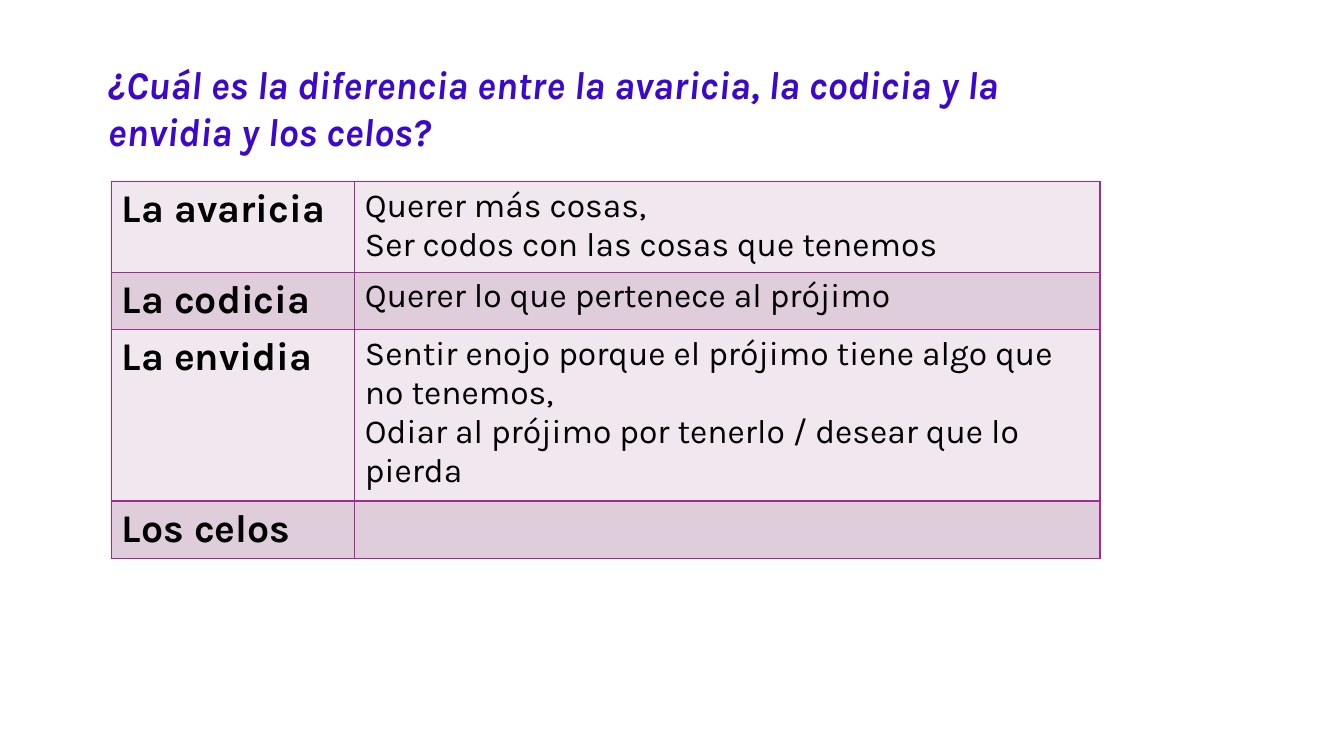
from lxml import etree
from pptx import Presentation
from pptx.dml.color import RGBColor
from pptx.enum import text
from pptx.oxml import ns
from pptx.util import Inches, Pt

FONT = "Karla"
COLORS = {
    "background": "FFFFFF",
    "title": "3C08CE",
    "body": "000000",
    "border": "A02B93",
    "light_row": "F0E8EE",
    "dark_row": "DFCDDC",
}
TITLE = "¿Cuál es la diferencia entre la avaricia, la codicia y la envidia y los celos?"
# Term, meaning, row height in inches
DEFINITIONS = [
    ("La avaricia", "Querer más cosas,\nSer codos con las cosas que tenemos", 0.89),
    ("La codicia", "Querer lo que pertenece al prójimo", 0.57),
    ("La envidia", "Sentir enojo porque el prójimo tiene algo que no tenemos,\n"
                   "Odiar al prójimo por tenerlo / desear que lo pierda", 1.7),
    ("Los celos", "", 0.57),
]
COLUMN_WIDTHS = (2.41, 7.39)


def color(name):
    return RGBColor.from_string(COLORS[name])


def write(frame, content, size, color_name, bold=False, italic=False):
    frame.text = content
    for para in frame.paragraphs:
        for span in para.runs:
            font = span.font
            font.name, font.size = FONT, Pt(size)
            font.bold, font.italic = bold, italic
            font.color.rgb = color(color_name)


def add_title(page):
    box = page.shapes.add_textbox(Inches(0.97), Inches(0.55), Inches(9.03), Inches(1.99))
    frame = box.text_frame
    frame.word_wrap = True
    frame.auto_size = text.MSO_AUTO_SIZE.SHAPE_TO_FIT_TEXT
    write(frame, TITLE, 28, "title", bold=True, italic=True)


def set_borders(cell):
    properties = cell._tc.get_or_add_tcPr()
    for index, side in enumerate(("lnL", "lnR", "lnT", "lnB")):
        line = etree.Element(ns.qn(f"a:{side}"), w=str(Pt(1)))
        fill = etree.SubElement(line, ns.qn("a:solidFill"))
        etree.SubElement(fill, ns.qn("a:srgbClr"), val=COLORS["border"])
        properties.insert(index, line)  # borders come before the fill


def add_definitions(page):
    height = sum(row_height for _, _, row_height in DEFINITIONS)
    table = page.shapes.add_table(
        len(DEFINITIONS), len(COLUMN_WIDTHS),
        Inches(1.11), Inches(1.8), Inches(sum(COLUMN_WIDTHS)), Inches(height)).table
    table.first_row = False
    for column, width in zip(table.columns, COLUMN_WIDTHS):
        column.width = Inches(width)
    for index, (term, meaning, row_height) in enumerate(DEFINITIONS):
        row = table.rows[index]
        row.height = Inches(row_height)
        term_cell, meaning_cell = row.cells
        write(term_cell.text_frame, term, 28, "body", bold=True)
        write(meaning_cell.text_frame, meaning, 24, "body")
        for cell in row.cells:
            cell.fill.solid()
            cell.fill.fore_color.rgb = color("dark_row" if index % 2 else "light_row")
            set_borders(cell)


def main():
    deck = Presentation()
    deck.slide_width, deck.slide_height = Inches(13.33), Inches(7.5)
    page = deck.slides.add_slide(deck.slide_layouts[6])
    page.background.fill.solid()
    page.background.fill.fore_color.rgb = color("background")
    add_title(page)
    add_definitions(page)
    deck.save("out.pptx")


if __name__ == "__main__":
    main()
